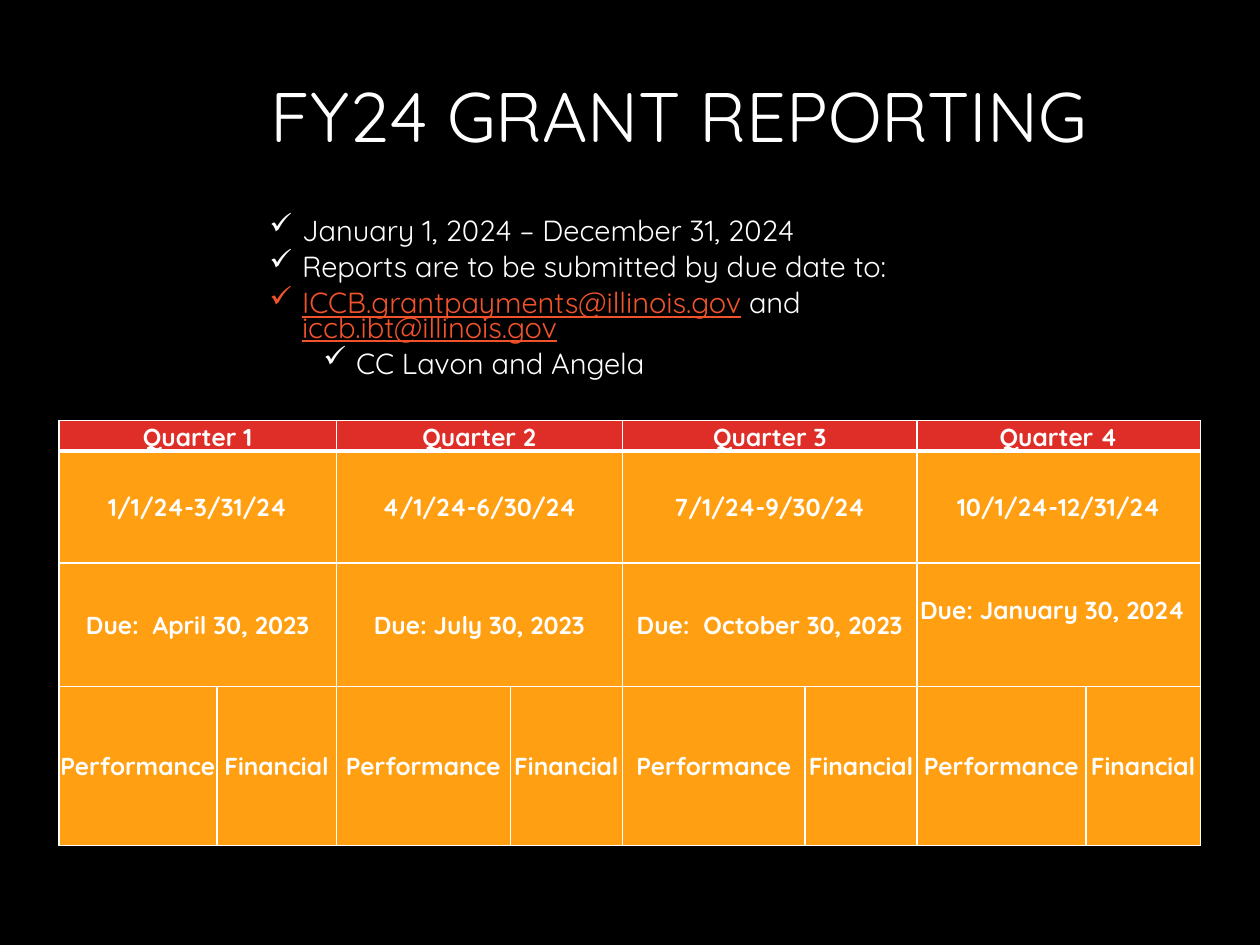
"""Build the FY24 grant reporting slide with its quarterly due-date table."""
from dataclasses import dataclass

from lxml.etree import SubElement
from pptx import Presentation
from pptx.dml.color import RGBColor as RGB
from pptx.enum.text import MSO_ANCHOR as ANCHOR, PP_ALIGN as ALIGN
from pptx.oxml import parse_xml
from pptx.oxml.ns import nsdecls, qn
from pptx.util import Cm, Pt


@dataclass(frozen=True)
class Theme:
    font: str = "Quicksand"
    back: str = "000000"
    text: str = "FFFFFF"
    link: str = "F0532B"
    header: str = "DF2E28"
    cell: str = "FF9F11"
    title_size: float = 40
    body_size: float = 16.6
    table_size: float = 14


theme = Theme()


def add_run(p, text, size, color=theme.text, bold=False, underline=False):
    r = p.add_run()
    r.text = text
    r.font.name = theme.font
    r.font.size = Pt(size)
    r.font.bold = bold
    r.font.underline = underline
    r.font.color.rgb = RGB.from_string(color)


def style_cell(cell, fill, top, bottom):
    cell.fill.solid()
    cell.fill.fore_color.rgb = RGB.from_string(fill)
    cell.margin_left = cell.margin_right = cell.margin_top = Cm(0.02)
    cell.margin_bottom = 0
    tc_pr = cell._tc.get_or_add_tcPr()
    for i, (side, width) in enumerate(zip("LRTB", (1, 1, top, bottom))):
        tc_pr.insert(i, parse_xml(
            f'<a:ln{side} {nsdecls("a")} w="{Pt(width)}"><a:solidFill>'
            f'<a:srgbClr val="{theme.text}"/></a:solidFill></a:ln{side}>'))


prs = Presentation()
prs.slide_width, prs.slide_height = Cm(25.4), Cm(19.05)
s = prs.slides.add_slide(prs.slide_layouts[6])
s.background.fill.solid()
s.background.fill.fore_color.rgb = RGB.from_string(theme.back)

tf = s.shapes.add_textbox(Cm(3.07), Cm(0.89), Cm(21.23), Cm(3.05)).text_frame
tf.word_wrap = True
tf.vertical_anchor = ANCHOR.MIDDLE
p = tf.paragraphs[0]
p.alignment = ALIGN.CENTER
p.line_spacing = 0.9
add_run(p, "FY24 GRANT REPORTING", theme.title_size)

bullets = [
    (0, [("January 1, 2024 – December 31, 2024", False)]),
    (0, [("Reports are to be submitted by due date to:", False)]),
    (0, [("ICCB.grantpayments@illinois.gov", True), (" and ", False),
         ("iccb.ibt@illinois.gov", True)]),
    (1, [("CC Lavon and Angela", False)]),
]
tf = s.shapes.add_textbox(Cm(5.18), Cm(3.61), Cm(15.01), Cm(4.11)).text_frame
tf.word_wrap = True
tf.margin_top = Cm(0.86)
for i, (level, parts) in enumerate(bullets):
    p = tf.paragraphs[0] if i == 0 else tf.add_paragraph()
    p.level = level
    p_pr = p._p.get_or_add_pPr()
    p_pr.set("marL", str(Cm(0.66 + 1.09 * level)))
    p_pr.set("indent", str(Cm(-0.66)))
    bullet_color = SubElement(p_pr, qn("a:buClr"))
    SubElement(bullet_color, qn("a:srgbClr"),
               val=theme.link if parts[0][1] else theme.text)
    SubElement(p_pr, qn("a:buChar"), char="✓")
    p.line_spacing = 0.7
    p.space_before = Pt(6.8 if i else 0)
    for text, is_link in parts:
        add_run(p, text, theme.body_size,
                theme.link if is_link else theme.text, underline=is_link)

rows = [
    [f"Quarter {n}" for n in range(1, 5)],
    ["1/1/24-3/31/24", "4/1/24-6/30/24", "7/1/24-9/30/24", "10/1/24-12/31/24"],
    ["Due:  April 30, 2023", "Due: July 30, 2023",
     "Due:  October 30, 2023", "Due: January 30, 2024"],
    ["Performance", "Financial"] * 4,
]
col_widths = [3.18, 2.41, 3.51, 2.26, 3.68, 2.26, 3.4, 2.31]
row_heights = [0.56, 2.26, 2.49, 3.2]
table = s.shapes.add_table(len(rows), len(col_widths), Cm(1.19), Cm(8.48),
                           Cm(sum(col_widths)), Cm(sum(row_heights))).table
table.first_row = table.horz_banding = False
for col, width in zip(table.columns, col_widths):
    col.width = Cm(width)

for i, (texts, height) in enumerate(zip(rows, row_heights)):
    table.rows[i].height = Cm(height)
    for j in range(len(col_widths)):
        style_cell(table.cell(i, j), theme.cell if i else theme.header,
                   top=3 if i == 1 else 1, bottom=1 if i else 3)
    span = len(col_widths) // len(texts)
    for j, text in enumerate(texts):
        cell = table.cell(i, j * span)
        if span > 1:
            cell.merge(table.cell(i, j * span + span - 1))
        cell.vertical_anchor = ANCHOR.MIDDLE if i else ANCHOR.BOTTOM
        p = cell.text_frame.paragraphs[0]
        p.alignment = ALIGN.CENTER
        add_run(p, text, theme.table_size, bold=True)

january = table.cell(2, 6)
january.margin_left = Cm(0.06)
january.margin_bottom = Cm(0.62)
january.text_frame.paragraphs[0].alignment = ALIGN.LEFT

prs.save("out.pptx")
